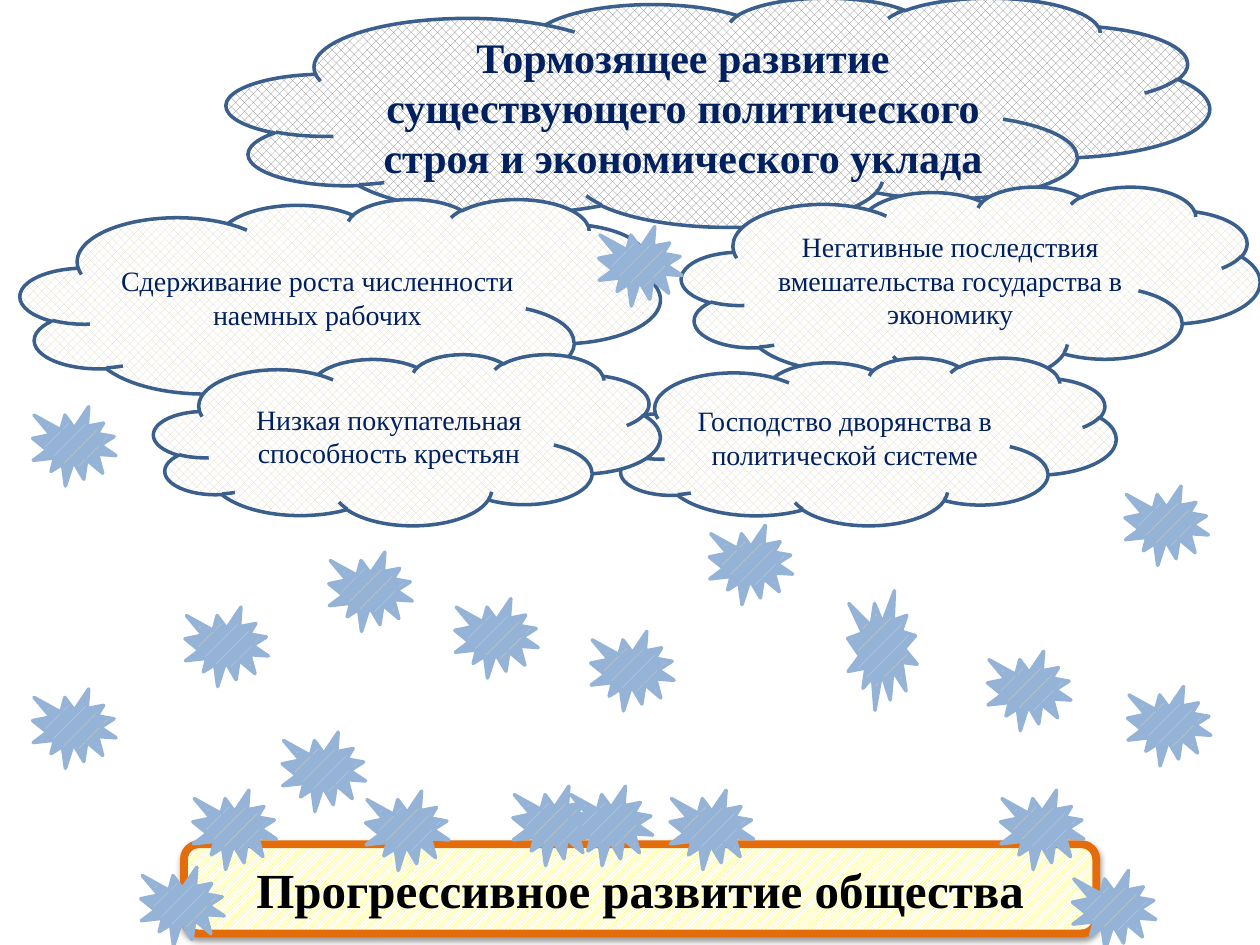
from collections import namedtuple

from lxml.etree import SubElement
from pptx import Presentation
from pptx.dml.color import RGBColor
from pptx.enum.dml import MSO_PATTERN
from pptx.enum.shapes import MSO_SHAPE
from pptx.enum.text import MSO_ANCHOR, PP_ALIGN
from pptx.oxml.ns import qn
from pptx.util import Cm, Pt

Box = namedtuple("Box", "left top width height")

COLORS = {
    "white": "FFFFFF",
    "grey": "808080",
    "sand": "DDD9C3",
    "outline": "3A5F8C",
    "navy": "002060",
    "black": "000000",
    "yellow": "FFFF00",
    "orange": "E46C0A",
    "star": "95B3D7",
}

OBSTACLES = [
    (Box(13.74, 3.76, 11.66, 3.96), "Негативные последствия вмешательства государства в экономику"),
    (Box(12.29, 7.21, 10.21, 3.38), "Господство дворянства в политической системе"),
    (Box(0.41, 4.01, 12.9, 4.17), "Сдерживание роста численности наемных рабочих"),
    (Box(3.1, 7.14, 10.21, 3.45), "Низкая покупательная способность крестьян"),
]

STAR_SIZE = (1.68, 1.6)
TALL_STAR = Box(17.09, 11.91, 1.4, 2.41)
STAR_CORNERS = [
    (3.73, 12.24), (14.3, 10.59), (12.07, 4.57), (6.63, 11.13), (9.17, 12.07),
    (3.89, 15.93), (20.17, 15.93), (10.34, 15.85), (13.51, 15.93), (11.48, 15.85),
    (22.68, 9.8), (0.66, 8.2), (21.62, 17.55), (0.66, 13.89), (19.91, 13.13),
    (7.37, 15.95), (2.84, 17.48), (5.69, 14.76), (22.73, 13.84),
]


def color(name):
    return RGBColor.from_string(COLORS[name])


def within(region, part):
    return part._replace(left=region.left + part.left, top=region.top + part.top)


def add_patterned(slide, kind, box, pattern, fore, back, outline, weight):
    shape = slide.shapes.add_shape(kind, *map(Cm, box))
    shape.shadow.inherit = False
    shape.fill.patterned()
    shape.fill.pattern = pattern
    shape.fill.fore_color.rgb = color(fore)
    shape.fill.back_color.rgb = color(back)
    shape.line.color.rgb = color(outline)
    shape.line.width = Pt(weight)
    return shape


def write(shape, text, size, ink, bold=False):
    frame = shape.text_frame
    frame.word_wrap = True
    frame.vertical_anchor = MSO_ANCHOR.MIDDLE
    paragraph = frame.paragraphs[0]
    paragraph.alignment = PP_ALIGN.CENTER
    run = paragraph.add_run()
    run.text = text
    run.font.name = "Times New Roman"
    run.font.size = Pt(size)
    run.font.bold = bold
    run.font.color.rgb = color(ink)


def add_drop_shadow(shape):
    effects = shape._element.spPr.find(qn("a:effectLst"))
    shadow = SubElement(effects, qn("a:outerShdw"), blurRad=str(Pt(3.1)),
                        dist=str(Pt(1.6)), dir="5400000", rotWithShape="0")
    tint = SubElement(shadow, qn("a:srgbClr"), val=COLORS["black"])
    SubElement(tint, qn("a:alpha"), val="38000")


def add_cloud(slide, box, text, fore, size, bold=False):
    cloud = add_patterned(slide, MSO_SHAPE.CLOUD, box, MSO_PATTERN.PERCENT_50,
                          fore, "white", "outline", 2)
    write(cloud, text, size, "navy", bold)


def add_clouds(slide, region):
    heading = Box(4.57, -0.05, 19.81, 4.62)
    add_cloud(slide, within(region, heading),
              "Тормозящее развитие существующего политического строя и экономического уклада",
              "grey", 24, True)
    for box, text in OBSTACLES:
        add_cloud(slide, within(region, box), text, "sand", 16)


def add_progress_bar(slide, region):
    bar = add_patterned(slide, MSO_SHAPE.ROUNDED_RECTANGLE, region,
                        MSO_PATTERN.LIGHT_UPWARD_DIAGONAL, "yellow", "white", "orange", 4.5)
    add_drop_shadow(bar)
    write(bar, "Прогрессивное развитие общества", 28, "black", True)


def add_stars(slide, region):
    first = Box(11.91, 12.73, *STAR_SIZE)
    others = [Box(*corner, *STAR_SIZE) for corner in STAR_CORNERS]
    for star in [first, TALL_STAR, *others]:
        add_patterned(slide, MSO_SHAPE.EXPLOSION1, within(region, star),
                      MSO_PATTERN.PERCENT_5, "sand", "star", "star", 2)


def main():
    presentation = Presentation()
    presentation.slide_width = Cm(25.4)
    presentation.slide_height = Cm(19.05)
    slide = presentation.slides.add_slide(presentation.slide_layouts[6])
    add_clouds(slide, Box(0, 0, 25.4, 10.6))
    add_progress_bar(slide, Box(3.71, 17.02, 18.39, 1.8))
    add_stars(slide, Box(0, 0, 25.4, 19.05))
    presentation.save("out.pptx")


if __name__ == "__main__":
    main()
